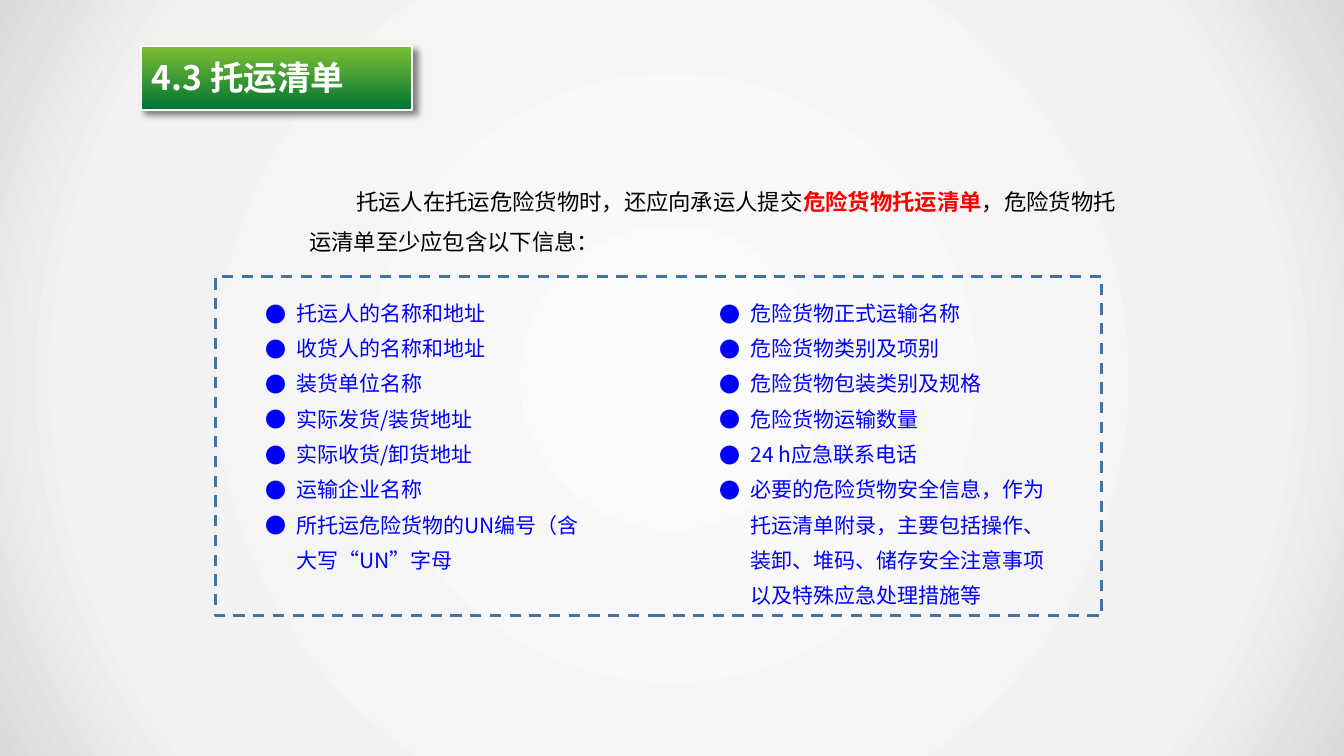
from lxml.etree import SubElement
from pptx import Presentation
from pptx.dml.color import RGBColor
from pptx.enum.dml import MSO_LINE
from pptx.enum.shapes import MSO_SHAPE
from pptx.oxml import parse_xml
from pptx.oxml.ns import nsdecls, qn
from pptx.util import Cm, Pt

FONT = "Noto Sans CJK SC"
rgb = RGBColor.from_string


def add_text(left, top, width, height):
    tf = s.shapes.add_textbox(Cm(left), Cm(top), Cm(width), Cm(height)).text_frame
    tf.word_wrap = True
    return tf


def format_run(r, size, color, bold=False):
    r.font.size = Pt(size)
    r.font.bold = bold
    r.font.color.rgb = rgb(color)
    r.font.name = FONT
    SubElement(r.font._element, qn("a:ea")).set("typeface", FONT)


prs = Presentation()
prs.slide_width, prs.slide_height = Cm(33.87), Cm(19.05)
s = prs.slides.add_slide(prs.slide_layouts[6])

backdrop = s.shapes.add_shape(MSO_SHAPE.RECTANGLE, 0, 0, prs.slide_width, prs.slide_height)
backdrop.shadow.inherit = False
backdrop.line.fill.background()
stops = "".join(
    f'<a:gs pos="{pos * 1000}"><a:srgbClr val="{color}"/></a:gs>'
    for pos, color in [(0, "FBFBFB"), (79, "F2F2F2"), (100, "D9D9D9")]
)
backdrop._element.spPr.find(qn("a:prstGeom")).addnext(parse_xml(
    f'<a:gradFill {nsdecls("a")} rotWithShape="1"><a:gsLst>{stops}</a:gsLst>'
    '<a:path path="circle"><a:fillToRect l="50000" t="50000" r="50000" b="50000"/></a:path>'
    '</a:gradFill>'
))

banner = s.shapes.add_shape(MSO_SHAPE.RECTANGLE, Cm(3.56), Cm(1.17), Cm(6.83), Cm(1.6))
banner.fill.gradient()
banner.fill.gradient_angle = 270
for stop, color in zip(banner.fill.gradient_stops, ["7CBF33", "007434"]):
    stop.color.rgb = rgb(color)
banner.line.color.rgb = rgb("FEFFFF")
banner.line.width = Pt(1.5)
banner.shadow.inherit = False
banner._element.spPr.find(qn("a:effectLst")).append(parse_xml(
    f'<a:outerShdw {nsdecls("a")} blurRad="{Pt(5)}" dist="{Pt(4.2)}" dir="2700000" algn="tl">'
    '<a:srgbClr val="000000"><a:alpha val="50000"/></a:srgbClr></a:outerShdw>'
))

tf = add_text(3.58, 1.32, 6.4, 1.3)
tf.text = "4.3 托运清单"
format_run(tf.paragraphs[0].runs[0], 24, "FFFFFF", True)

tf = add_text(7.54, 4.27, 20.96, 2.31)
p = tf.paragraphs[0]
p.line_spacing = 1.5
p._p.get_or_add_pPr().set("indent", str(Cm(1.19)))
for text, color, bold in [
    ("托运人在托运危险货物时，还应向承运人提交", "000000", False),
    ("危险货物托运清单", "FF0000", True),
    ("，危险货物托运清单至少应包含以下信息：", "000000", False),
]:
    r = p.add_run()
    r.text = text
    format_run(r, 16, color, bold)

columns = [
    (6.43, 8.61, 7.44, [
        "托运人的名称和地址",
        "收货人的名称和地址",
        "装货单位名称",
        "实际发货/装货地址",
        "实际收货/卸货地址",
        "运输企业名称",
        "所托运危险货物的UN编号（含大写“UN”字母",
    ]),
    (17.88, 9.19, 8.33, [
        "危险货物正式运输名称",
        "危险货物类别及项别",
        "危险货物包装类别及规格",
        "危险货物运输数量",
        "24 h应急联系电话",
        "必要的危险货物安全信息，作为托运清单附录，主要包括操作、装卸、堆码、储存安全注意事项以及特殊应急处理措施等",
    ]),
]
for left, width, height, items in columns:
    tf = add_text(left, 7.19, width, height)
    tf.text = "\n".join(items)
    for p in tf.paragraphs:
        p.line_spacing = 1.4
        pPr = p._p.get_or_add_pPr()
        pPr.set("marL", str(Cm(0.79)))
        pPr.set("indent", str(-Cm(0.79)))
        SubElement(pPr, qn("a:buFont")).set("typeface", FONT)
        SubElement(pPr, qn("a:buChar")).set("char", "●")
        format_run(p.runs[0], 15, "0000FF")

frame = s.shapes.add_shape(MSO_SHAPE.RECTANGLE, Cm(5.44), Cm(6.96), Cm(22.33), Cm(8.56))
frame.shadow.inherit = False
frame.fill.background()
frame.line.color.rgb = rgb("43739E")
frame.line.width = Pt(2)
frame.line.dash_style = MSO_LINE.DASH

prs.save("out.pptx")
